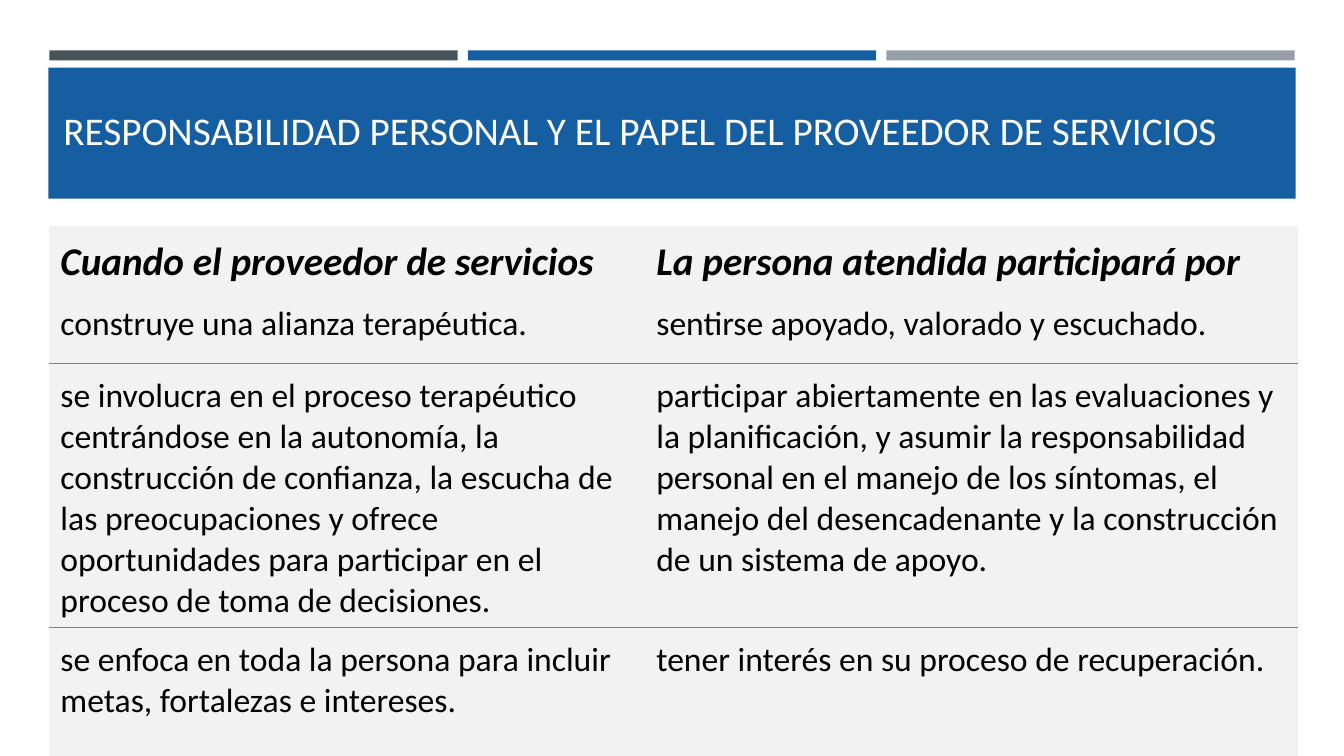
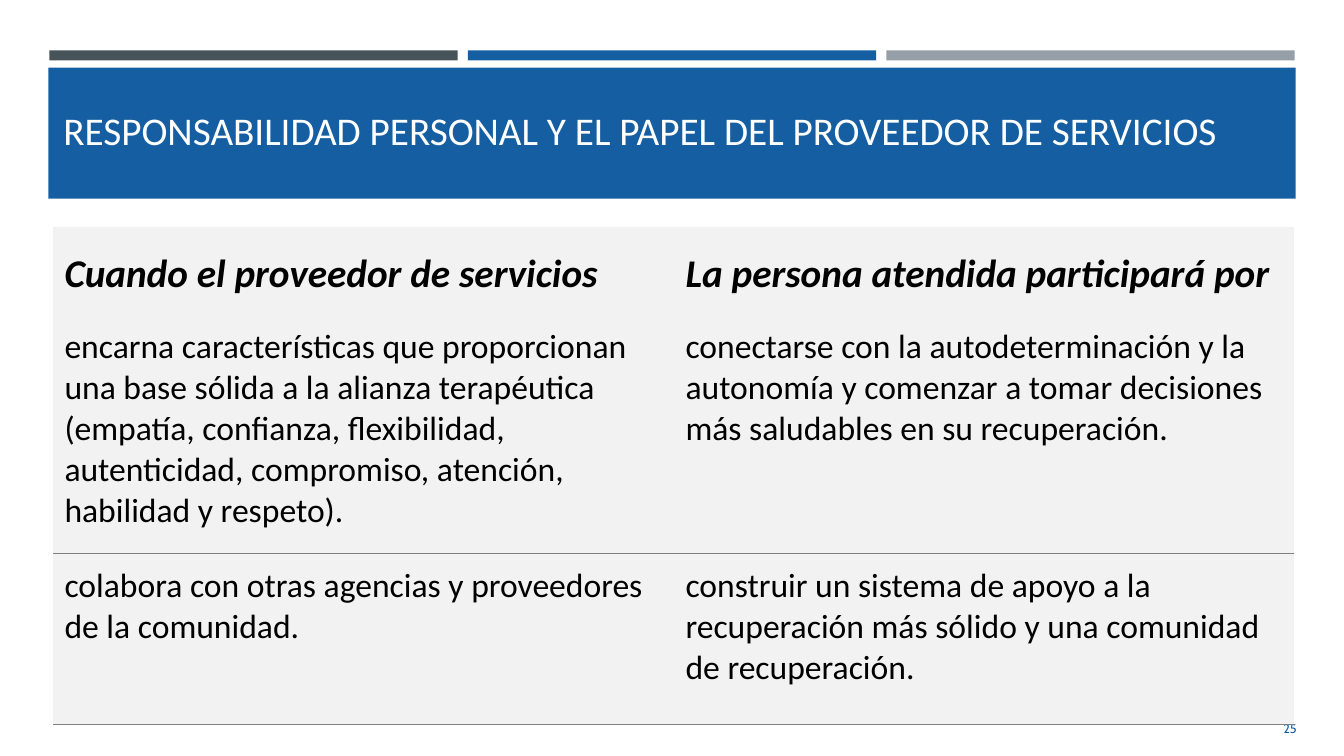
from lxml.etree import SubElement
from pptx import Presentation
from pptx.dml.color import RGBColor
from pptx.enum.shapes import MSO_SHAPE as Shape
from pptx.enum.text import MSO_ANCHOR as Anchor, PP_ALIGN as Align
from pptx.oxml.ns import qn
from pptx.util import Inches, Pt

TITLE = "RESPONSABILIDAD PERSONAL Y EL PAPEL DEL PROVEEDOR DE SERVICIOS"
HEADINGS = ("Cuando el proveedor de servicios", "La persona atendida participará por")
RULED_ROWS = (1, 2)


def color(value):
    return RGBColor.from_string(value)


class Board:
    BLUE, SLATE, GRAY = "155EA1", "465359", "969FA7"
    WHITE, BLACK, PANEL, RULE = "FFFFFF", "000000", "F2F2F2", "808080"
    FONT, NUMBER_FONT = "Calibri", "Cabin"

    def __init__(self, deck):
        self.deck = deck
        self.slide = None

    def start(self):
        self.slide = self.deck.slides.add_slide(self.deck.slide_layouts[6])
        for index, fill in enumerate((self.SLATE, self.BLUE, self.GRAY)):
            self.band(0.49 + index * 4.15, 0.5, 4.05, 0.1, fill)
        self.band(0.48, 0.67, 12.37, 1.3, self.BLUE)

    def band(self, left, top, width, height, fill):
        box = self.slide.shapes.add_shape(
            Shape.RECTANGLE, Inches(left), Inches(top), Inches(width), Inches(height))
        box.shadow.inherit = False
        box.fill.solid()
        box.fill.fore_color.rgb = color(fill)
        box.line.fill.background()

    def style(self, para, size, ink, name=FONT, strong=False):
        for span in para.runs:
            font = span.font
            font.name, font.size = name, Pt(size)
            font.bold = font.italic = strong
            font.color.rgb = color(ink)

    def text(self, words, left, top, width, height, anchor):
        box = self.slide.shapes.add_textbox(
            Inches(left), Inches(top), Inches(width), Inches(height))
        frame = box.text_frame
        frame.text = words
        frame.word_wrap = True
        frame.vertical_anchor = anchor
        return frame

    def title(self, words):
        frame = self.text(words, 0.53, 0.82, 12.17, 1.11, Anchor.BOTTOM)
        frame.margin_bottom = Inches(0.4)
        para = frame.paragraphs[0]
        para.line_spacing = 0.9
        self.style(para, 28, self.WHITE)

    def page_number(self, number):
        frame = self.text(number, 11.81, 7.03, 1.15, 0.4, Anchor.MIDDLE)
        para = frame.paragraphs[0]
        para.alignment = Align.RIGHT
        self.style(para, 9, self.BLUE, self.NUMBER_FONT)

    def borders(self, cell, row):
        ruled = {"a:lnT": row - 1 in RULED_ROWS, "a:lnB": row in RULED_ROWS}
        properties = cell._tc.get_or_add_tcPr()
        for tag in ("a:lnL", "a:lnR", "a:lnT", "a:lnB"):
            line = SubElement(properties, qn(tag), w=str(Pt(0.75)))
            if ruled.get(tag):
                fill = SubElement(line, qn("a:solidFill"))
                SubElement(fill, qn("a:srgbClr"), val=self.RULE)
            else:
                SubElement(line, qn("a:noFill"))

    def cell(self, cell, words, row):
        heading = row == 0
        cell.text = words
        cell.margin_left = cell.margin_right = Inches(0.11)
        cell.margin_top, cell.margin_bottom = Inches(0.12), Inches(0.06)
        cell.vertical_anchor = Anchor.MIDDLE if heading else Anchor.TOP
        self.borders(cell, row)
        cell.fill.solid()
        cell.fill.fore_color.rgb = color(self.PANEL)
        self.style(cell.text_frame.paragraphs[0], 28 if heading else 24,
                   self.BLACK, strong=heading)

    def table(self, left, top, widths, heights, pairs):
        rows = [HEADINGS, *pairs]
        table = self.slide.shapes.add_table(
            len(rows), len(widths), Inches(left), Inches(top),
            Inches(sum(widths)), Inches(sum(heights))).table
        table.horz_banding = False
        for column, width in zip(table.columns, widths):
            column.width = Inches(width)
        for index, (height, row) in enumerate(zip(heights, rows)):
            table.rows[index].height = Inches(height)
            for position, words in enumerate(row):
                self.cell(table.cell(index, position), words, index)


def main():
    deck = Presentation()
    deck.slide_width, deck.slide_height = Inches(13.33), Inches(7.5)
    board = Board(deck)

    board.start()
    board.title(TITLE)
    board.table(0.49, 2.24, (5.91, 6.47), (0.65, 0.72, 2.62, 1.27), [
        ("construye una alianza terapéutica.",
         "sentirse apoyado, valorado y escuchado."),
        ("se involucra en el proceso terapéutico centrándose en la autonomía, "
         "la construcción de confianza, la escucha de las preocupaciones y ofrece "
         "oportunidades para participar en el proceso de toma de decisiones.",
         "participar abiertamente en las evaluaciones y la planificación, y asumir "
         "la responsabilidad personal en el manejo de los síntomas, el manejo del "
         "desencadenante y la construcción de un sistema de apoyo."),
        ("se enfoca en toda la persona para incluir metas, fortalezas e intereses.",
         "tener interés en su proceso de recuperación."),
    ])

    board.start()
    board.page_number("25")
    board.title(TITLE)
    board.table(0.53, 2.25, (6.16, 6.14), (0.87, 2.37, 1.7), [
        ("encarna características que proporcionan una base sólida a la alianza "
         "terapéutica (empatía, confianza, flexibilidad, autenticidad, compromiso, "
         "atención, habilidad y respeto).",
         "conectarse con la autodeterminación y la autonomía y comenzar a tomar "
         "decisiones más saludables en su recuperación."),
        ("colabora con otras agencias y proveedores de la comunidad.",
         "construir un sistema de apoyo a la recuperación más sólido y una "
         "comunidad de recuperación."),
    ])

    deck.save("out.pptx")


if __name__ == "__main__":
    main()
